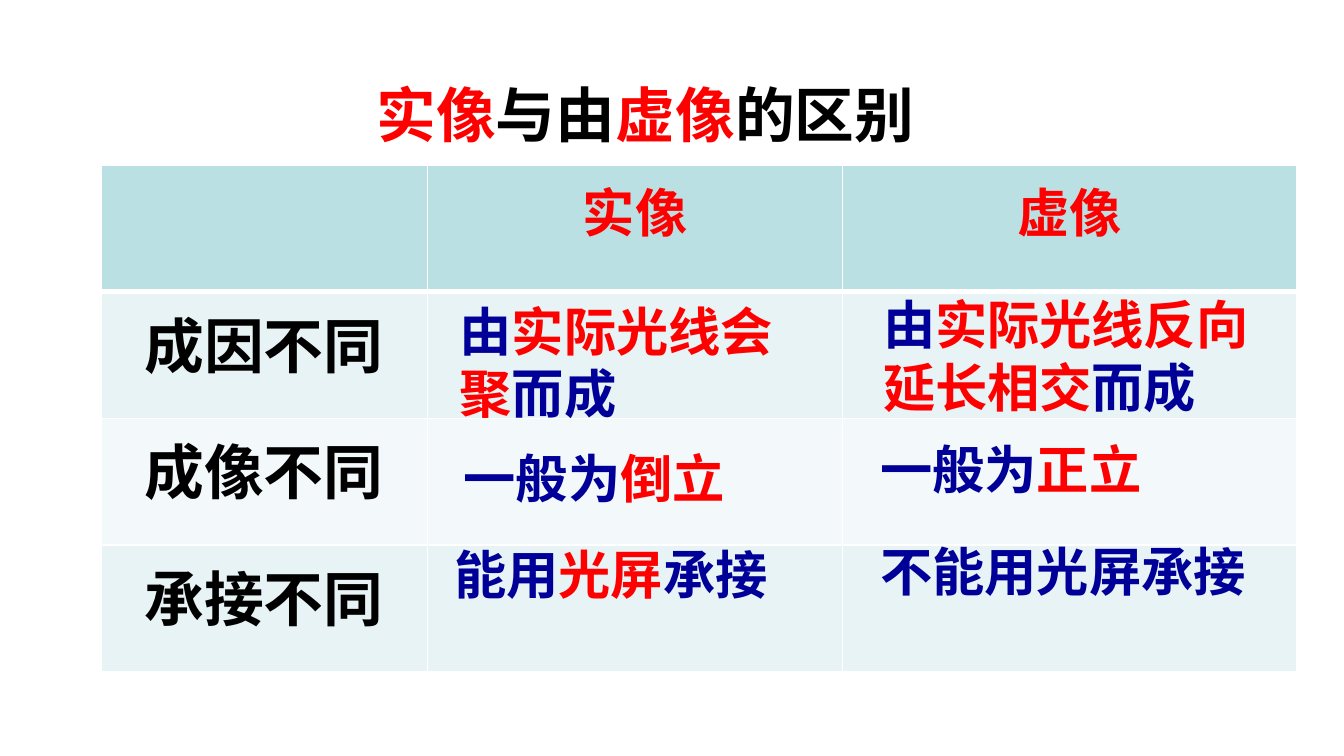
from dataclasses import dataclass

from lxml import etree
from pptx import Presentation
from pptx.dml.color import RGBColor
from pptx.enum.text import MSO_ANCHOR, PP_ALIGN
from pptx.oxml.ns import qn
from pptx.util import Inches, Pt

TOP, MIDDLE = MSO_ANCHOR.TOP, MSO_ANCHOR.MIDDLE
LEFT, CENTER = PP_ALIGN.LEFT, PP_ALIGN.CENTER


@dataclass(frozen=True)
class Theme:
    font: str = "Noto Sans CJK SC"
    black: str = "000000"
    red: str = "FF0000"
    navy: str = "000099"
    border: str = "FFFFFF"
    header: str = "BBE0E3"
    bands: tuple[str, str] = ("E7F3F4", "F3F9FA")
    large: int = 32
    body: int = 28
    thin: int = 1
    thick: int = 3


T = Theme()


@dataclass(frozen=True)
class Run:
    text: str
    color: str = T.navy


@dataclass(frozen=True)
class Note:
    left: float
    top: float
    width: float
    height: float
    runs: tuple[Run, ...]
    size: int = T.body
    anchor: int = MIDDLE
    margins: tuple[float, float, float, float] = (0.07, 0.04, 0.07, 0.04)


SLIDE_WIDTH = 10
SLIDE_HEIGHT = SLIDE_WIDTH * 9 / 16
COLUMNS = (2.43, 3.09, 3.38)
TABLE_HEIGHT = 3.77
ROWS = (
    ("", "实像", "虚像"),
    ("成因不同", "", ""),
    ("成像不同", "", ""),
    ("承接不同", "", ""),
)
TITLE = Note(
    2.17, 0.53, 6.22, 0.64,
    (Run("实像", T.red), Run("与由", T.black), Run("虚像", T.red), Run("的区别", T.black)),
    T.large, TOP, (0.63, 0.05, 0.1, 0.05),
)
NOTES = (
    Note(3.35, 2.18, 2.68, 1.02, (Run("由"), Run("实际光线会聚", T.red), Run("而成"))),
    Note(6.5, 2.13, 3.15, 1.02, (Run("由"), Run("实际光线反向延长相交", T.red), Run("而成"))),
    Note(3.38, 3.28, 2.68, 0.55, (Run("一般为"), Run("倒立", T.red))),
    Note(6.48, 3.21, 2.68, 0.55, (Run("一般为"), Run("正立", T.red))),
    Note(3.31, 3.99, 2.68, 0.55, (Run("能用"), Run("光屏", T.red), Run("承接"))),
    Note(6.48, 3.97, 3.17, 0.55, (Run("不能用光屏承接"),)),
)


def write(tf, runs: tuple[Run, ...], size: int, align: int = LEFT) -> None:
    p = tf.paragraphs[0]
    p.alignment = align
    for run in runs:
        r = p.add_run()
        r.text = run.text
        for name, value in {"name": T.font, "size": Pt(size), "bold": True}.items():
            setattr(r.font, name, value)
        r.font.color.rgb = RGBColor.from_string(run.color)
        etree.SubElement(r.font._element, qn("a:ea"), typeface=T.font)


def add_note(s, note: Note) -> None:
    box = (note.left, note.top, note.width, note.height)
    tf = s.shapes.add_textbox(*map(Inches, box)).text_frame
    left, top, right, bottom = map(Inches, note.margins)
    settings = {
        "word_wrap": True, "vertical_anchor": note.anchor,
        "margin_left": left, "margin_top": top,
        "margin_right": right, "margin_bottom": bottom,
    }
    for name, value in settings.items():
        setattr(tf, name, value)
    write(tf, note.runs, note.size)


def set_borders(cell, widths: dict[str, int]) -> None:
    tc_pr = cell._tc.get_or_add_tcPr()
    for side, width in widths.items():
        line = etree.SubElement(tc_pr, qn(f"a:ln{side}"), w=str(Pt(width)))
        fill = etree.SubElement(line, qn("a:solidFill"))
        etree.SubElement(fill, qn("a:srgbClr"), val=T.border)


def add_comparison(s) -> None:
    frame = s.shapes.add_table(
        len(ROWS), len(COLUMNS), Inches(0.75), Inches(1.23),
        Inches(sum(COLUMNS)), Inches(TABLE_HEIGHT),
    )
    table = frame.table
    for column, width in zip(table.columns, COLUMNS):
        column.width = Inches(width)
    for i, texts in enumerate(ROWS):
        fill = T.bands[(i - 1) % 2] if i else T.header
        color, size = (T.black, T.large) if i else (T.red, T.body)
        borders = {
            "L": T.thin, "R": T.thin,
            "T": T.thick if i == 1 else T.thin,
            "B": T.thick if i == 0 else T.thin,
        }
        for j, text in enumerate(texts):
            cell = table.cell(i, j)
            set_borders(cell, borders)
            cell.fill.solid()
            cell.fill.fore_color.rgb = RGBColor.from_string(fill)
            if text:
                write(cell.text_frame, (Run(text, color),), size, CENTER)


def main() -> None:
    prs = Presentation()
    prs.slide_width, prs.slide_height = Inches(SLIDE_WIDTH), Inches(SLIDE_HEIGHT)
    s = prs.slides.add_slide(prs.slide_layouts[6])
    add_comparison(s)
    for note in (TITLE, *NOTES):
        add_note(s, note)
    prs.save("out.pptx")


if __name__ == "__main__":
    main()
